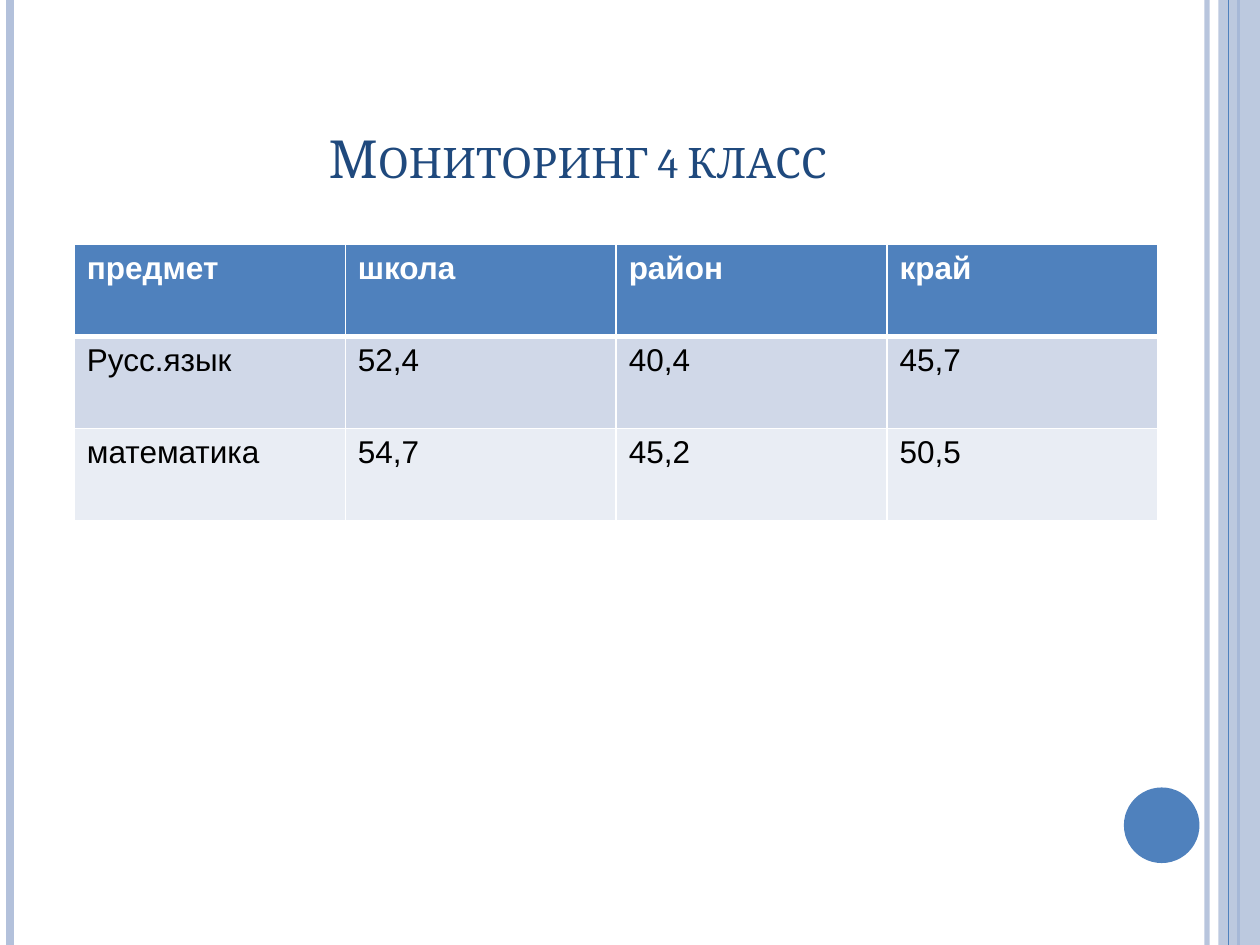
from lxml.etree import SubElement
from pptx import Presentation
from pptx.dml.color import RGBColor
from pptx.enum.shapes import MSO_CONNECTOR, MSO_SHAPE
from pptx.enum.text import MSO_ANCHOR, PP_ALIGN
from pptx.oxml.ns import qn
from pptx.util import Inches, Pt

BLUE, PALE, WHITE = "4F81BD", "B3C1DB", "FFFFFF"


def paint(fill, color, alpha=100):
    fill.solid()
    fill.fore_color.rgb = RGBColor.from_string(color)
    if alpha < 100:
        node = fill._xPr.find(".//" + qn("a:srgbClr"))
        SubElement(node, qn("a:alpha"), val=str(alpha * 1000))


def write(frame, text, size=18, font="Arial", color="000000", bold=False,
          align=PP_ALIGN.LEFT, caps="none"):
    para = frame.paragraphs[0]
    para.alignment = align
    run = para.add_run()
    run.text = text
    run.font.size = Pt(size)
    run.font.name = font
    run.font.bold = bold
    paint(run.font.fill, color)
    run.font._element.set("cap", caps)


deck = Presentation()
deck.slide_width, deck.slide_height = Inches(10), Inches(7.5)
slide = deck.slides.add_slide(deck.slide_layouts[6])
shapes = slide.shapes
paint(slide.background.fill, WHITE)

# Side band, under the thin line that crosses it
band = shapes.add_shape(MSO_SHAPE.RECTANGLE, Inches(9.67), 0,
                        Inches(0.33), Inches(7.5))

# Vertical lines: x, colour, width, opacity
for x, color, width, alpha in [
    (9.58, PALE, 3, 93),
    (0.08, PALE, 4.5, 100),
    (9.83, BLUE, 1.5, 100),
    (9.75, BLUE, 0.75, 100),
]:
    line = shapes.add_connector(MSO_CONNECTOR.STRAIGHT, Inches(x), 0,
                                Inches(x), Inches(7.5))
    line.line.width = Pt(width)
    paint(line.line.fill, color, alpha)
    SubElement(line._element.spPr, qn("a:effectLst"))
    if x == 9.83:
        # The band covers every line drawn so far
        line._element.addnext(band._element)

# Corner disc
disc = shapes.add_shape(MSO_SHAPE.OVAL, Inches(8.92), Inches(6.25),
                        Inches(0.6), Inches(0.6))
for shape, color, alpha in [(band, PALE, 87), (disc, BLUE, 100)]:
    paint(shape.fill, color, alpha)
    shape.line.fill.background()
    shape.shadow.inherit = False

# Title
title = shapes.add_textbox(Inches(0.5), Inches(0.3), Inches(8.17), Inches(1.25))
title.text_frame.word_wrap = True
title.text_frame.vertical_anchor = MSO_ANCHOR.BOTTOM
write(title.text_frame, "Мониторинг 4 класс", size=30, font="Cambria",
      color="1F497D", align=PP_ALIGN.CENTER, caps="small")

# Results table
rows = [
    ["предмет", "школа", "район", "край"],
    ["Русс.язык", "52,4", "40,4", "45,7"],
    ["математика", "54,7", "45,2", "50,5"],
]
fills = [BLUE, "D0D8E8", "E9EDF4"]
table = shapes.add_table(len(rows), len(rows[0]), Inches(0.59), Inches(1.94),
                         Inches(8.6), Inches(2.19)).table
for col in table.columns:
    col.width = Inches(2.15)
for r, row in enumerate(rows):
    table.rows[r].height = Inches(0.73)
    head = r == 0
    for c, text in enumerate(row):
        cell = table.cell(r, c)
        write(cell.text_frame, text, bold=head,
              color=WHITE if head else "000000")
        # White borders, thick under the header; they precede the fill
        props = cell._tc.get_or_add_tcPr()
        for side in "LRTB":
            thick = (r, side) in [(0, "B"), (1, "T")]
            edge = SubElement(props, qn("a:ln" + side),
                              w=str(Pt(3 if thick else 1)))
            solid = SubElement(edge, qn("a:solidFill"))
            SubElement(solid, qn("a:srgbClr"), val=WHITE)
        paint(cell.fill, fills[r])

deck.save("out.pptx")
